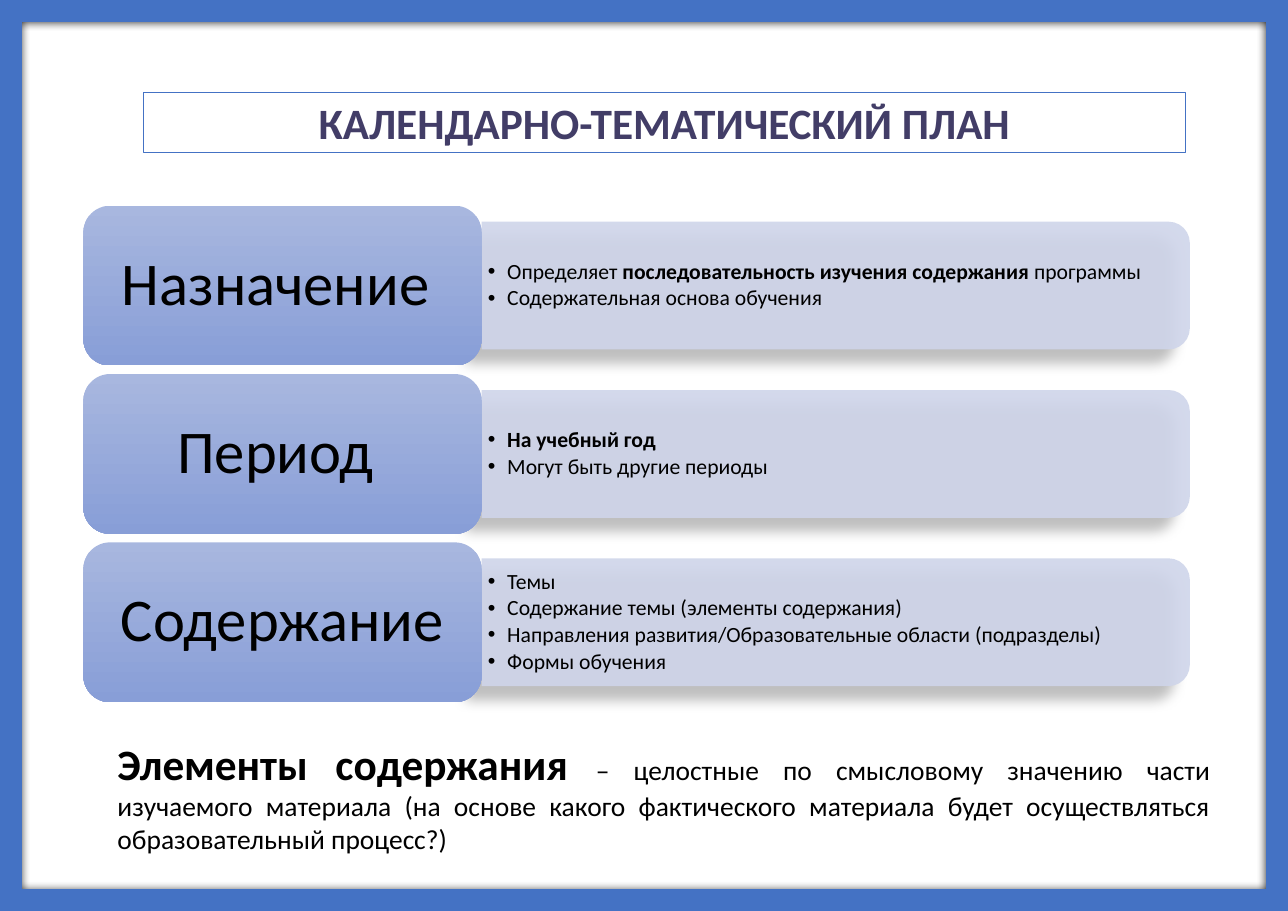
from lxml import etree
from pptx import Presentation
from pptx.dml.color import RGBColor
from pptx.enum.shapes import MSO_SHAPE
from pptx.enum.text import MSO_ANCHOR, MSO_AUTO_SIZE, PP_ALIGN
from pptx.oxml.ns import qn
from pptx.util import Inches, Pt

FRAME, ROUND = MSO_SHAPE.FRAME, MSO_SHAPE.ROUNDED_RECTANGLE
ROUND_TOP = MSO_SHAPE.ROUND_2_SAME_RECTANGLE
TOP, MIDDLE = MSO_ANCHOR.TOP, MSO_ANCHOR.MIDDLE
CENTER, JUSTIFY, LEFT = PP_ALIGN.CENTER, PP_ALIGN.JUSTIFY, PP_ALIGN.LEFT
NO_FIT = MSO_AUTO_SIZE.NONE

WIDTH, HEIGHT = 16.53, 11.69
BLUE, BAR, INK, BLACK = "4472C4", "CFD5EA", "423D67", "000000"
LABEL_TOP, LABEL_BOTTOM = "A8B7DF", "889ED7"
ROW_TOP, ROW_PITCH, ROW_HEIGHT = 2.64, 2.16, 2.05
LABEL_LEFT, LABEL_WIDTH = 1.07, 5.11
BAR_LEFT, BAR_LENGTH, BAR_HEIGHT = 6.18, 9.09, 1.64
POINT_HEIGHT = 1.48

ROWS = [
    ("Назначение ", [
        [("Определяет ", False), ("последовательность изучения содержания", True),
         (" программы", False)],
        [("Содержательная основа обучения", False)],
    ]),
    ("Период ", [
        [("На учебный год", True)],
        [("Могут быть другие периоды", False)],
    ]),
    ("Содержание ", [
        [("Темы", False)],
        [("Содержание темы (элементы содержания)", False)],
        [("Направления развития/Образовательные области (подразделы)", False)],
        [("Формы обучения", False)],
    ]),
]


def rgb(value):
    return RGBColor.from_string(value)


def add_xml(parent, tag, **attrs):
    return etree.SubElement(parent, qn(tag), {k: str(v) for k, v in attrs.items()})


def set_all(target, values):
    for name, value in values.items():
        setattr(target, name, value)


class Page:
    font = "Calibri"

    def __init__(self, prs):
        self.s = prs.slides.add_slide(prs.slide_layouts[5])

    def place(self, sp, left, top, width, height):
        set_all(sp, {"left": Inches(left), "top": Inches(top),
                     "width": Inches(width), "height": Inches(height)})

    def frame_text(self, sp, anchor, inset_x=0.1, inset_y=0.05):
        tf = sp.text_frame
        set_all(tf, {"word_wrap": True, "auto_size": NO_FIT, "vertical_anchor": anchor,
                     "margin_left": Inches(inset_x), "margin_right": Inches(inset_x),
                     "margin_top": Inches(inset_y), "margin_bottom": Inches(inset_y)})
        return tf

    def run(self, p, text, size, color=BLACK, bold=False):
        r = p.add_run()
        r.text = text
        set_all(r.font, {"name": self.font, "size": Pt(size), "bold": bold})
        r.font.color.rgb = rgb(color)

    def title(self, text, box):
        sp = self.s.shapes.title
        self.place(sp, *box)
        sp.fill.solid()
        sp.fill.fore_color.rgb = rgb("FFFFFF")
        sp.line.color.rgb = rgb(BLUE)
        sp.line.width = Pt(1)
        p = self.frame_text(sp, TOP).paragraphs[0]
        p.alignment = CENTER
        self.run(p, text, 40, INK, True)

    def shape(self, kind, box, fill=None, alpha=None):
        sp = self.s.shapes.add_shape(kind, *map(Inches, box))
        sp.line.fill.background()
        sp.shadow.inherit = False
        if fill:
            sp.fill.solid()
            sp.fill.fore_color.rgb = rgb(fill)
        if alpha:
            color = sp._element.spPr.find(qn("a:solidFill")).find(qn("a:srgbClr"))
            add_xml(color, "a:alpha", val=alpha * 1000)
        return sp

    def shadow(self, sp, alpha, blur, distance, angle):
        effects = sp._element.spPr.find(qn("a:effectLst"))
        outer = add_xml(effects, "a:outerShdw", blurRad=Pt(blur), dist=Pt(distance),
                        dir=angle * 60000, algn="ctr", rotWithShape=0)
        color = add_xml(outer, "a:srgbClr", val=BLACK)
        add_xml(color, "a:alpha", val=alpha * 1000)

    def border(self):
        sp = self.shape(FRAME, (0, 0, WIDTH, HEIGHT), BLUE)
        sp.adjustments[0] = 0.024
        self.shadow(sp, 100, 8.5, 1, 90)

    def bar(self, middle):
        left = BAR_LEFT + (BAR_LENGTH - BAR_HEIGHT) / 2
        sp = self.shape(ROUND_TOP, (left, middle - BAR_LENGTH / 2, BAR_HEIGHT, BAR_LENGTH),
                        BAR, 90)
        sp.rotation = 90
        self.shadow(sp, 28, 11.8, 19.7, 141)

    def label(self, text, top):
        sp = self.shape(ROUND, (LABEL_LEFT, top, LABEL_WIDTH, ROW_HEIGHT))
        sp.fill.gradient()
        sp.fill.gradient_angle = 270
        for stop, color in zip(sp.fill.gradient_stops, (LABEL_TOP, LABEL_BOTTOM)):
            stop.color.rgb = rgb(color)
        p = self.frame_text(sp, MIDDLE, 0.33, 0.22).paragraphs[0]
        set_all(p, {"alignment": CENTER, "line_spacing": 0.9})
        self.run(p, text, 56)

    def text(self, box, paragraphs, anchor=TOP, align=LEFT, bullets=False, inset=(0.1, 0.05)):
        sp = self.s.shapes.add_textbox(*map(Inches, box))
        tf = self.frame_text(sp, anchor, *inset)
        for i, runs in enumerate(paragraphs):
            p = tf.add_paragraph() if i else tf.paragraphs[0]
            p.alignment = align
            if bullets:
                pPr = p._p.get_or_add_pPr()
                pPr.set("marL", str(Inches(0.25)))
                pPr.set("indent", str(-Inches(0.25)))
                add_xml(pPr, "a:buFont", typeface="Arial")
                add_xml(pPr, "a:buChar", char="•")
                set_all(p, {"line_spacing": 0.9, "space_after": Pt(3)})
            for text, size, bold in runs:
                self.run(p, text, size, bold=bold)

    def row(self, top, name, points):
        middle = top + ROW_HEIGHT / 2
        self.bar(middle)
        runs = [[(text, 20, bold) for text, bold in point] for point in points]
        self.text((BAR_LEFT, middle - POINT_HEIGHT / 2, 9.01, POINT_HEIGHT), runs,
                  MIDDLE, bullets=True, inset=(0.08, 0.04))
        self.label(name, top)


def main():
    prs = Presentation()
    set_all(prs, {"slide_width": Inches(WIDTH), "slide_height": Inches(HEIGHT)})
    page = Page(prs)
    page.border()
    page.title("КАЛЕНДАРНО-ТЕМАТИЧЕСКИЙ ПЛАН", (1.84, 1.19, 13.37, 0.77))
    for i, (name, points) in enumerate(ROWS):
        page.row(ROW_TOP + i * ROW_PITCH, name, points)
    page.text((1.41, 9.41, 14.23, 1.63), [[
        ("Элементы содержания ", 40, True),
        ("– целостные по смысловому значению части изучаемого материала "
         "(на основе какого фактического материала будет осуществляться "
         "образовательный процесс?)", 25.4, False),
    ]], align=JUSTIFY)
    prs.save("out.pptx")


if __name__ == "__main__":
    main()
